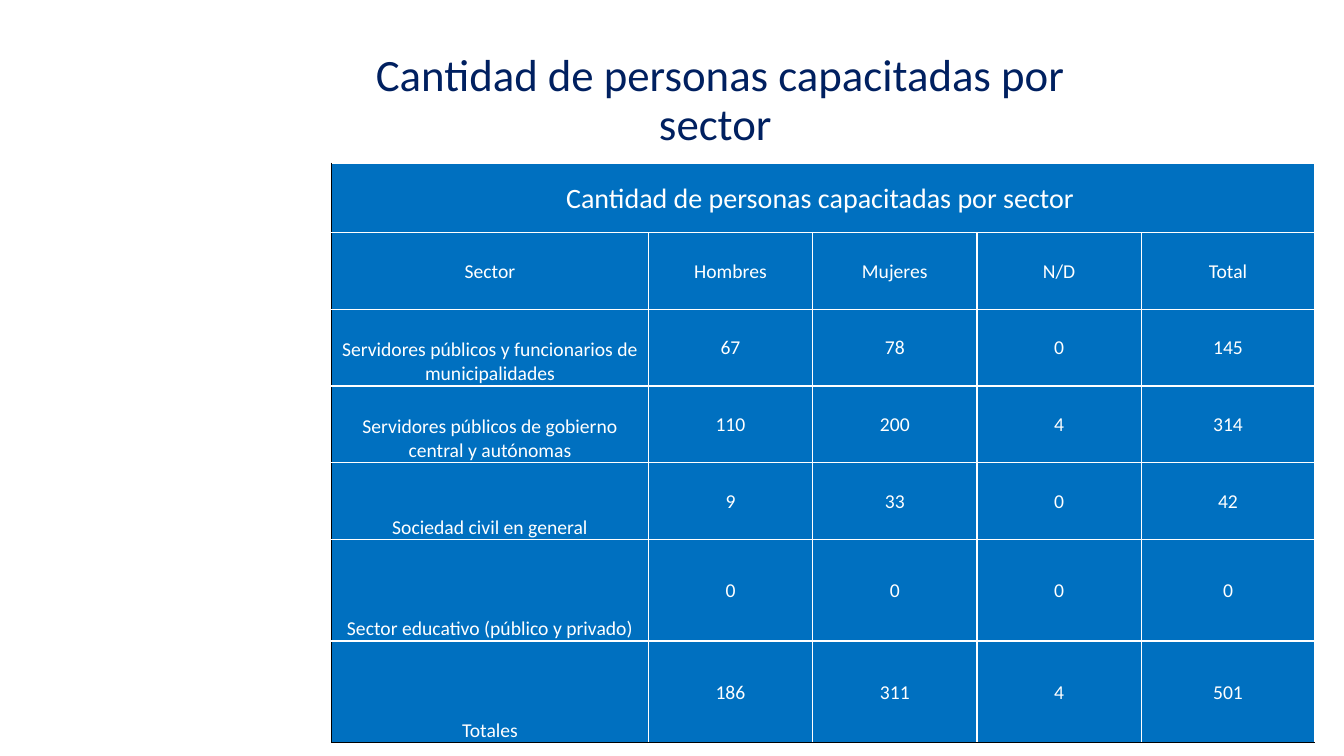
from dataclasses import dataclass

from lxml.etree import SubElement
from pptx import Presentation
from pptx.dml.color import RGBColor
from pptx.enum.text import MSO_ANCHOR, PP_ALIGN
from pptx.oxml.ns import qn
from pptx.slide import Slide
from pptx.table import _Cell
from pptx.text.text import _Paragraph
from pptx.util import Emu, Pt

EMU_PER_PX = 9144  # 100 px to the inch
FONT = "Calibri"
COLORS = {"title": "002060", "cell": "0070C0", "light": "FFFFFF", "dark": "000000"}
HEADING = "Cantidad de personas capacitadas por sector "
COLUMN_WIDTHS = [314, 163, 163, 163, 172]
ROW_HEIGHTS = [69] + [76] * 4 + [101] * 2
COLUMN_NAMES = ["Sector", "Hombres", "Mujeres", "N/D", "Total"]


@dataclass
class Sector:
    name: str
    men: int
    women: int
    unknown: int

    def row(self) -> list[str]:
        counts = [self.men, self.women, self.unknown]
        return [self.name] + [str(count) for count in counts + [sum(counts)]]


SECTORS = [
    Sector("Servidores públicos y funcionarios de municipalidades", 67, 78, 0),
    Sector("Servidores públicos de gobierno central y autónomas", 110, 200, 4),
    Sector("Sociedad civil en general", 9, 33, 0),
    Sector("Sector educativo (público y privado)", 0, 0, 0),
]
TOTALS = Sector(
    "Totales",
    sum(sector.men for sector in SECTORS),
    sum(sector.women for sector in SECTORS),
    sum(sector.unknown for sector in SECTORS),
)


def px(length: int) -> Emu:
    return Emu(length * EMU_PER_PX)


def write(para: _Paragraph, text: str, size: int, color: str) -> None:
    para.text = text
    para.alignment = PP_ALIGN.CENTER
    para.font.name = FONT
    para.font.size = Pt(size)
    para.font.color.rgb = RGBColor.from_string(COLORS[color])


def add_border(cell: _Cell, side: str, color: str) -> None:
    line = SubElement(cell._tc.get_or_add_tcPr(), qn(f"a:ln{side}"), w=str(Pt(1)))
    fill = SubElement(line, qn("a:solidFill"))
    SubElement(fill, qn("a:srgbClr"), val=COLORS[color])


def style_cell(cell: _Cell, is_first_column: bool, is_last_row: bool) -> None:
    add_border(cell, "L", "dark" if is_first_column else "light")
    add_border(cell, "R", "light")
    add_border(cell, "T", "light")
    add_border(cell, "B", "dark" if is_last_row else "light")
    cell.fill.solid()
    cell.fill.fore_color.rgb = RGBColor.from_string(COLORS["cell"])
    cell.margin_left = cell.margin_right = cell.margin_top = px(1)
    cell.margin_bottom = 0
    cell.vertical_anchor = MSO_ANCHOR.MIDDLE


def add_title(page: Slide) -> None:
    box = page.shapes.add_textbox(px(329), px(39), px(771), px(123))
    frame = box.text_frame
    frame.word_wrap = True
    frame.vertical_anchor = MSO_ANCHOR.MIDDLE
    para = frame.paragraphs[0]
    write(para, HEADING, 32, "title")
    para.line_spacing = 0.9


def add_sector_table(page: Slide) -> None:
    rows = [COLUMN_NAMES] + [sector.row() for sector in SECTORS + [TOTALS]]
    table = page.shapes.add_table(
        len(ROW_HEIGHTS), len(COLUMN_WIDTHS), px(329), px(162),
        px(sum(COLUMN_WIDTHS)), px(sum(ROW_HEIGHTS)),
    ).table
    for column, width in zip(table.columns, COLUMN_WIDTHS):
        column.width = px(width)
    for row, height in zip(table.rows, ROW_HEIGHTS):
        row.height = px(height)
    last_row = len(ROW_HEIGHTS) - 1
    for row_index, row in enumerate(table.rows):
        for column_index, cell in enumerate(row.cells):
            style_cell(cell, column_index == 0, row_index == last_row)

    table.cell(0, 0).merge(table.cell(0, len(COLUMN_WIDTHS) - 1))
    write(table.cell(0, 0).text_frame.paragraphs[0], HEADING, 20, "light")
    for row_index, texts in enumerate(rows, start=1):
        for column_index, text in enumerate(texts):
            cell = table.cell(row_index, column_index)
            write(cell.text_frame.paragraphs[0], text, 14, "light")
        if row_index > 1:
            table.cell(row_index, 0).vertical_anchor = MSO_ANCHOR.BOTTOM


def main() -> None:
    deck = Presentation()
    deck.slide_width, deck.slide_height = px(1333), px(750)
    page = deck.slides.add_slide(deck.slide_layouts[6])
    add_title(page)
    add_sector_table(page)
    deck.save("out.pptx")


if __name__ == "__main__":
    main()
